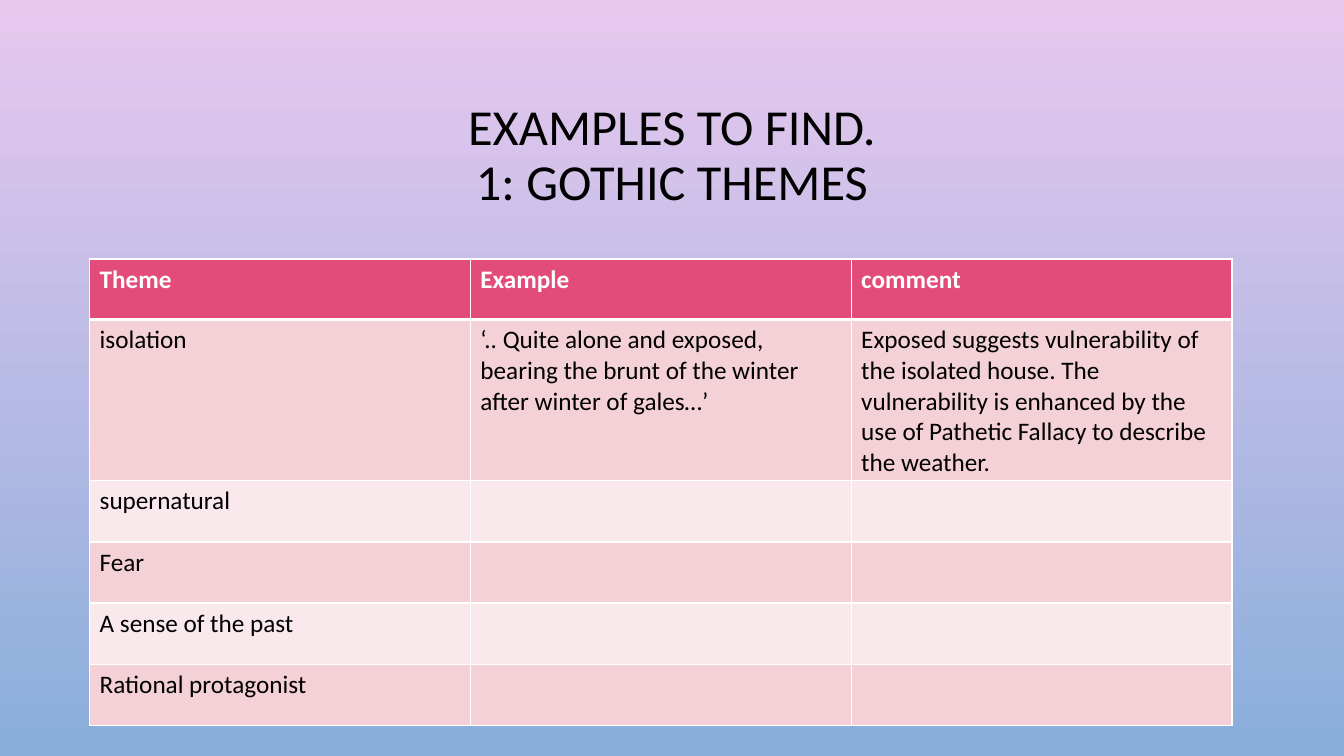
from lxml import etree
from pptx import Presentation
from pptx import util as u
from pptx.dml.color import RGBColor
from pptx.enum import text
from pptx.oxml import ns

BLACK = RGBColor(0x00, 0x00, 0x00)
WHITE = RGBColor(0xFF, 0xFF, 0xFF)
LILAC = RGBColor(0xE9, 0xC8, 0xEF)
SKY = RGBColor(0x89, 0xAE, 0xDB)
ROSE = RGBColor(0xE3, 0x4B, 0x7A)
PINK = RGBColor(0xF4, 0xD0, 0xD7)
BLUSH = RGBColor(0xFA, 0xE9, 0xEC)

TITLE = ["EXAMPLES TO FIND.", "1: GOTHIC THEMES"]
THEMES = [
    ["Theme", "Example", "comment"],
    ["isolation",
     "‘.. Quite alone and exposed, bearing the brunt of the winter after winter of gales…’",
     "Exposed suggests vulnerability of the isolated house. The vulnerability is "
     "enhanced by the use of Pathetic Fallacy to describe the weather."],
    ["supernatural", "", ""],
    ["Fear", "", ""],
    ["A sense of the past", "", ""],
    ["Rational protagonist", "", ""],
]


class Deck:
    font = "Calibri"
    col = u.Inches(1) / 9
    row = u.Inches(0.1)

    def __init__(self):
        self.prs = Presentation()
        self.prs.slide_width = int(120 * self.col)
        self.prs.slide_height = int(75 * self.row)
        self.slide = self.prs.slides.add_slide(self.prs.slide_layouts[6])

    def place(self, left, top, width, height):
        return (int(left * self.col), int(top * self.row),
                int(width * self.col), int(height * self.row))

    def fade(self, first, last):
        fill = self.slide.background.fill
        fill.gradient()
        fill.gradient_angle = 270
        for stop, tone in zip(fill.gradient_stops, (first, last)):
            stop.color.rgb = tone

    def run(self, para, words, size, tone, bold=False):
        run = para.add_run()
        run.text = words
        run.font.name = self.font
        run.font.size = u.Pt(size)
        run.font.bold = bold
        run.font.color.rgb = tone

    def title(self, lines, at):
        frame = self.slide.shapes.add_textbox(*self.place(*at)).text_frame
        frame.word_wrap = True
        frame.vertical_anchor = text.MSO_ANCHOR.MIDDLE
        para = frame.paragraphs[0]
        para.alignment = text.PP_ALIGN.CENTER
        para.line_spacing = 0.9
        for i, line in enumerate(lines):
            if i:
                para.add_line_break()
            self.run(para, line, 36, BLACK)

    def edge(self, cell, sides):
        props = cell._tc.get_or_add_tcPr()
        for i, (side, width) in enumerate(sides.items()):
            line = etree.Element(ns.qn("a:ln" + side), w=str(u.Pt(width)))
            fill = etree.SubElement(line, ns.qn("a:solidFill"))
            etree.SubElement(fill, ns.qn("a:srgbClr"), val=str(WHITE))
            props.insert(i, line)

    def table(self, rows, at, head):
        grid = self.slide.shapes.add_table(
            len(rows), len(rows[0]), *self.place(*at)).table
        for r, words in enumerate(rows):
            if r == 0:
                grid.rows[r].height = int(head * self.row)
            band = ROSE if r == 0 else PINK if r % 2 else BLUSH
            for c, word in enumerate(words):
                cell = grid.cell(r, c)
                cell.fill.solid()
                cell.fill.fore_color.rgb = band
                self.edge(cell, {"L": 1, "R": 1, "T": 3 if r == 1 else 1,
                                 "B": 3 if r == 0 else 1})
                if word:
                    self.run(cell.text_frame.paragraphs[0], word, 18,
                             BLACK if r else WHITE, r == 0)


def main():
    deck = Deck()
    deck.fade(LILAC, SKY)
    deck.title(TITLE, (9, 6.8, 102, 17.5))
    deck.table(THEMES, (8, 25.7, 102, 36.4), 6)
    deck.prs.save("out.pptx")


if __name__ == "__main__":
    main()
